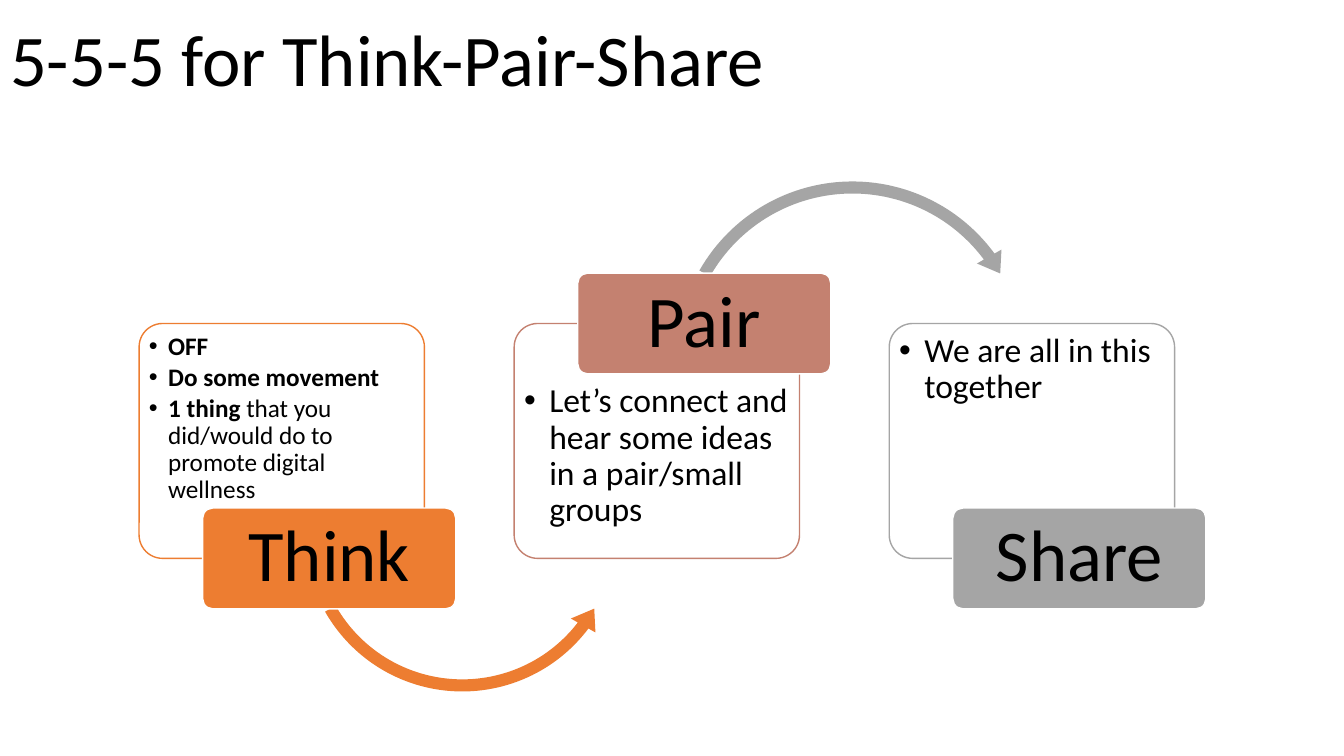
import pptx
import pptx.util
import pptx.dml.color
import pptx.enum.shapes
import pptx.enum.text
import pptx.oxml.ns
from lxml import etree

Inches, Pt = pptx.util.Inches, pptx.util.Pt
RGBColor = pptx.dml.color.RGBColor
MSO_SHAPE = pptx.enum.shapes.MSO_SHAPE
MSO_ANCHOR = pptx.enum.text.MSO_ANCHOR
PP_ALIGN = pptx.enum.text.PP_ALIGN
qn = pptx.oxml.ns.qn

BLACK = RGBColor(0x00, 0x00, 0x00)
WHITE = RGBColor(0xFF, 0xFF, 0xFF)
ORANGE = RGBColor(0xED, 0x7D, 0x31)
ROSE = RGBColor(0xC4, 0x81, 0x70)
GRAY = RGBColor(0xA5, 0xA5, 0xA5)
FONT = "Calibri"
HEADING_SIZE = 52

TITLE = "5-5-5 for Think-Pair-Share"
STEPS = [
    {"name": "Think", "color": ORANGE, "label_on_top": False, "size": 18, "indent": 0.19,
     "points": [[("OFF", True)],
                [("Do some movement", True)],
                [("1 thing ", True),
                 ("that you did/would do to promote digital wellness", False)]],
     "arrow": (MSO_SHAPE.LEFT_CIRCULAR_ARROW, 2.94, 3.65, 3.29, (4.57, 22.33, 90.24), ORANGE)},
    {"name": "Pair", "color": ROSE, "label_on_top": True, "size": 24, "indent": 0.25,
     "points": [[("Let’s connect and hear some ideas in a pair/small groups", False)]],
     "arrow": (MSO_SHAPE.CIRCULAR_ARROW, 6.63, 1.72, 3.65, (4.09, 194.16, 125.75), GRAY)},
    {"name": "Share", "color": GRAY, "label_on_top": False, "size": 24, "indent": 0.25,
     "points": [[("We are all in this together", False)]],
     "arrow": None},
]

CARD_LEFT, CARD_TOP, CARD_WIDTH, CARD_HEIGHT = 1.38, 3.21, 2.83, 2.33
STEP_PITCH = 3.72
LABEL_OFFSET, LABEL_WIDTH, LABEL_HEIGHT = 0.63, 2.51, 1
CARD_PADDING = 0.03
BAND_WIDTH, HEAD_WIDTH = 0.12, 0.14


def style_font(font, size, bold=False):
    font.name = FONT
    font.size = Pt(size)
    font.bold = bold
    font.color.rgb = BLACK


def add_part(kind, left, top, width, height, fill, line=None):
    part = slide.shapes.add_shape(kind, Inches(left), Inches(top), Inches(width), Inches(height))
    part.shadow.inherit = False
    part.fill.solid()
    part.fill.fore_color.rgb = fill
    if line is None:
        part.line.fill.background()
    else:
        part.line.color.rgb = line
        part.line.width = Pt(1)
    return part


def add_card(step, left):
    card = add_part(MSO_SHAPE.ROUNDED_RECTANGLE, left, CARD_TOP, CARD_WIDTH, CARD_HEIGHT,
                    WHITE, step["color"])
    card.adjustments[0] = 0.1
    frame = card.text_frame
    frame.word_wrap = True
    frame.vertical_anchor = MSO_ANCHOR.TOP
    frame.margin_left = frame.margin_right = frame.margin_bottom = Inches(CARD_PADDING)
    frame.margin_top = Inches(CARD_PADDING + (LABEL_HEIGHT / 2 if step["label_on_top"] else 0))
    for index, point in enumerate(step["points"]):
        paragraph = frame.add_paragraph() if index else frame.paragraphs[0]
        paragraph.alignment = PP_ALIGN.LEFT
        paragraph.line_spacing = 0.9
        paragraph.space_after = Pt(step["size"] * 0.15)
        for text, bold in point:
            run = paragraph.add_run()
            run.text = text
            style_font(run.font, step["size"], bold)
        properties = paragraph._p.get_or_add_pPr()
        properties.set("marL", str(Inches(step["indent"])))
        properties.set("indent", str(-Inches(step["indent"])))
        etree.SubElement(properties, qn("a:buFont")).set("typeface", "Arial")
        etree.SubElement(properties, qn("a:buChar")).set("char", "•")


def add_arrow(kind, left, top, size, angles, color):
    arrow = add_part(kind, left, top, size, size, color)
    values = (BAND_WIDTH / size, *angles, HEAD_WIDTH / size)
    for index, value in enumerate(values):
        arrow.adjustments[index] = value


def add_label(step, left):
    edge = CARD_TOP if step["label_on_top"] else CARD_TOP + CARD_HEIGHT
    label = add_part(MSO_SHAPE.ROUNDED_RECTANGLE, left + LABEL_OFFSET, edge - LABEL_HEIGHT / 2,
                     LABEL_WIDTH, LABEL_HEIGHT, step["color"], WHITE)
    label.adjustments[0] = 0.1
    frame = label.text_frame
    frame.word_wrap = True
    frame.vertical_anchor = MSO_ANCHOR.MIDDLE
    frame.text = step["name"]
    paragraph = frame.paragraphs[0]
    paragraph.alignment = PP_ALIGN.CENTER
    paragraph.line_spacing = 0.9
    style_font(paragraph.runs[0].font, HEADING_SIZE)


deck = pptx.Presentation()
deck.slide_width, deck.slide_height = Inches(13.33), Inches(7.5)
slide = deck.slides.add_slide(deck.slide_layouts[5])

title = slide.shapes.title
title.left, title.top, title.width, title.height = Inches(0), Inches(0), Inches(11.5), Inches(1.24)
title.text_frame.text = TITLE
title.text_frame.vertical_anchor = MSO_ANCHOR.MIDDLE
heading = title.text_frame.paragraphs[0]
heading.alignment = PP_ALIGN.LEFT
heading.line_spacing = 0.9
style_font(heading.runs[0].font, HEADING_SIZE)

for number, step in enumerate(STEPS):
    step_left = CARD_LEFT + number * STEP_PITCH
    add_card(step, step_left)
    if step["arrow"]:
        add_arrow(*step["arrow"])
    add_label(step, step_left)

deck.save("out.pptx")
